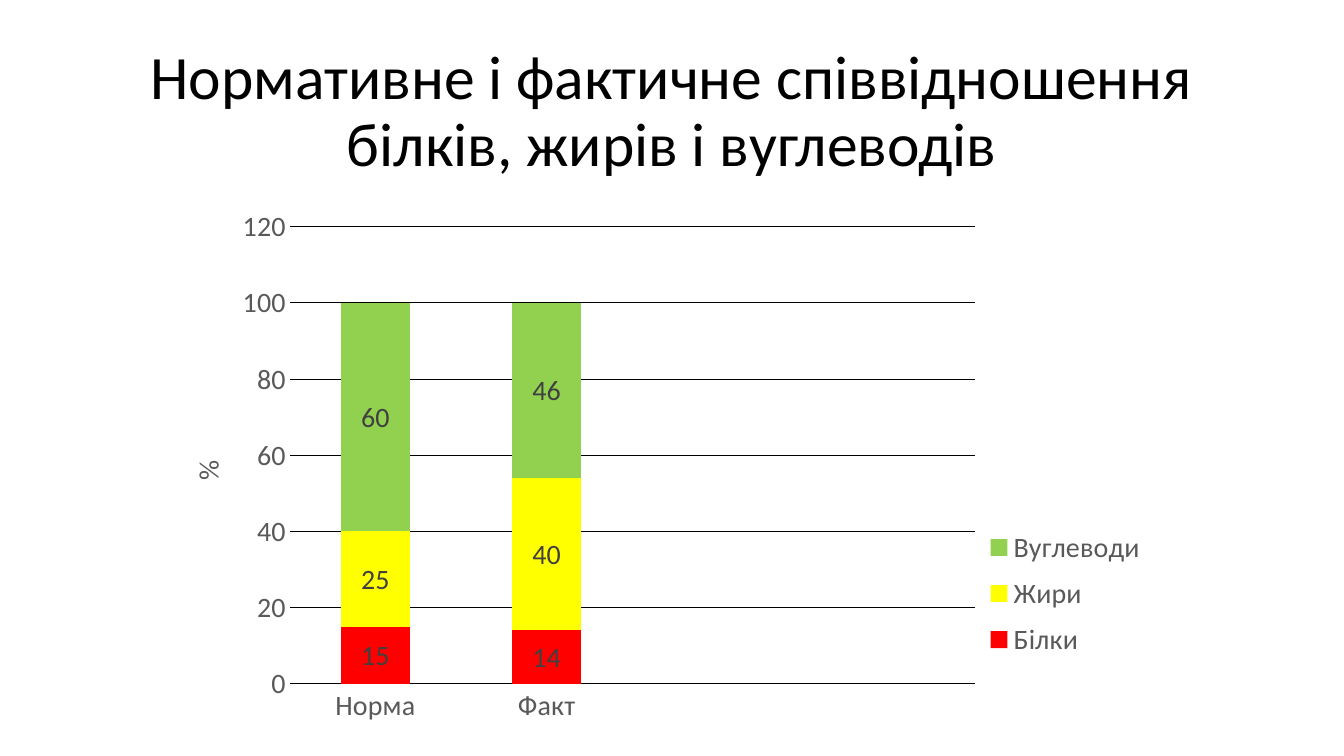
from dataclasses import dataclass

from lxml import etree
from pptx import Presentation
from pptx import util as u
from pptx.chart.data import CategoryChartData
from pptx.dml.color import RGBColor
from pptx.enum import chart as charts, text
from pptx.oxml.ns import qn

FONT = "Calibri"
LABEL_SIZE = 20
AXIS_GREY = "595959"


@dataclass
class Nutrient:
    name: str
    norm: int
    actual: int
    color: str


@dataclass
class Layout:
    parent: str
    index: int
    fractions: dict[str, float]
    inner: bool = False


NUTRIENTS = [
    Nutrient("Білки", 15, 14, "FF0000"),
    Nutrient("Жири", 25, 40, "FFFF00"),
    Nutrient("Вуглеводи", 60, 46, "92D050"),
]

LAYOUTS = [
    Layout("c:plotArea", 0, {"x": 0.135, "y": 0.053, "w": 0.673, "h": 0.856}, inner=True),
    Layout("c:legend", 1, {"x": 0.817, "y": 0.6, "w": 0.16, "h": 0.28}),
    Layout("c:valAx/c:title", 1, {"x": 0.03, "y": 0.48}),
]


def rgb(color: str) -> RGBColor:
    return RGBColor.from_string(color)


def format_font(font, size: float, color: str) -> None:
    font.name = FONT
    font.size = u.Pt(size)
    font.bold = False
    font.color.rgb = rgb(color)


def place_part(chart, layout: Layout) -> None:
    """Fix a chart part at fractions of the chart area."""
    parent = chart.element.xpath(f".//{layout.parent}")[0]
    for automatic in parent.findall(qn("c:layout")):
        parent.remove(automatic)
    element = etree.Element(qn("c:layout"))
    manual = etree.SubElement(element, qn("c:manualLayout"))
    if layout.inner:
        etree.SubElement(manual, qn("c:layoutTarget"), val="inner")
    for key in ("x", "y"):
        etree.SubElement(manual, qn(f"c:{key}Mode"), val="edge")
    for key, value in layout.fractions.items():
        etree.SubElement(manual, qn(f"c:{key}"), val=str(value))
    parent.insert(layout.index, element)


def add_title(slide) -> None:
    title = slide.shapes.title
    title.left, title.top = u.Cm(2.33), u.Cm(1.01)
    title.width, title.height = u.Cm(29.21), u.Cm(3.68)
    frame = title.text_frame
    frame.text = "Нормативне і фактичне співвідношення білків, жирів і вуглеводів"
    frame.word_wrap = True
    frame.vertical_anchor = text.MSO_ANCHOR.MIDDLE
    paragraph = frame.paragraphs[0]
    paragraph.alignment = text.PP_ALIGN.CENTER
    paragraph.line_spacing = 0.9
    format_font(paragraph.runs[0].font, 44, "000000")


def add_nutrient_chart(slide) -> None:
    # Two unnamed categories leave the right half of the plot free
    data = CategoryChartData()
    data.categories = ["Норма", "Факт", "", ""]
    for nutrient in NUTRIENTS:
        data.add_series(nutrient.name, [nutrient.norm, nutrient.actual, None, None])
    chart = slide.shapes.add_chart(
        charts.XL_CHART_TYPE.COLUMN_STACKED,
        u.Cm(3.84), u.Cm(5), u.Cm(25.65), u.Cm(13.46), data,
    ).chart
    format_font(chart.font, LABEL_SIZE, "000000")
    chart.has_title = False

    # Columns and their values
    plot = chart.plots[0]
    plot.vary_by_categories = False
    plot.gap_width, plot.overlap = 150, 100
    for series, nutrient in zip(plot.series, NUTRIENTS):
        series.format.fill.solid()
        series.format.fill.fore_color.rgb = rgb(nutrient.color)
        labels = series.data_labels
        labels.show_value = True
        format_font(labels.font, LABEL_SIZE, "404040")

    # Axes
    value_axis = chart.value_axis
    for axis in (chart.category_axis, value_axis):
        axis.major_tick_mark = axis.minor_tick_mark = charts.XL_TICK_MARK.NONE
        axis.format.line.fill.background()
        format_font(axis.tick_labels.font, LABEL_SIZE, AXIS_GREY)
    value_axis.minimum_scale, value_axis.maximum_scale = 0, 120
    value_axis.major_unit = 20
    grid = value_axis.major_gridlines.format.line
    grid.color.rgb = rgb("000000")
    grid.width = u.Pt(0.75)
    title_frame = value_axis.axis_title.text_frame
    title_frame.text = "%"
    format_font(title_frame.paragraphs[0].runs[0].font, LABEL_SIZE, AXIS_GREY)
    chart.element.xpath(".//c:valAx/c:title//a:bodyPr")[0].set("rot", "-5400000")

    # Legend
    chart.has_legend = True
    chart.legend.position = charts.XL_LEGEND_POSITION.RIGHT
    chart.legend.include_in_layout = False
    format_font(chart.legend.font, LABEL_SIZE, AXIS_GREY)

    for layout in LAYOUTS:
        place_part(chart, layout)


def main() -> None:
    presentation = Presentation()
    presentation.slide_width, presentation.slide_height = u.Cm(33.87), u.Cm(19.05)
    slide = presentation.slides.add_slide(presentation.slide_layouts[5])
    add_title(slide)
    add_nutrient_chart(slide)
    presentation.save("out.pptx")


if __name__ == "__main__":
    main()
